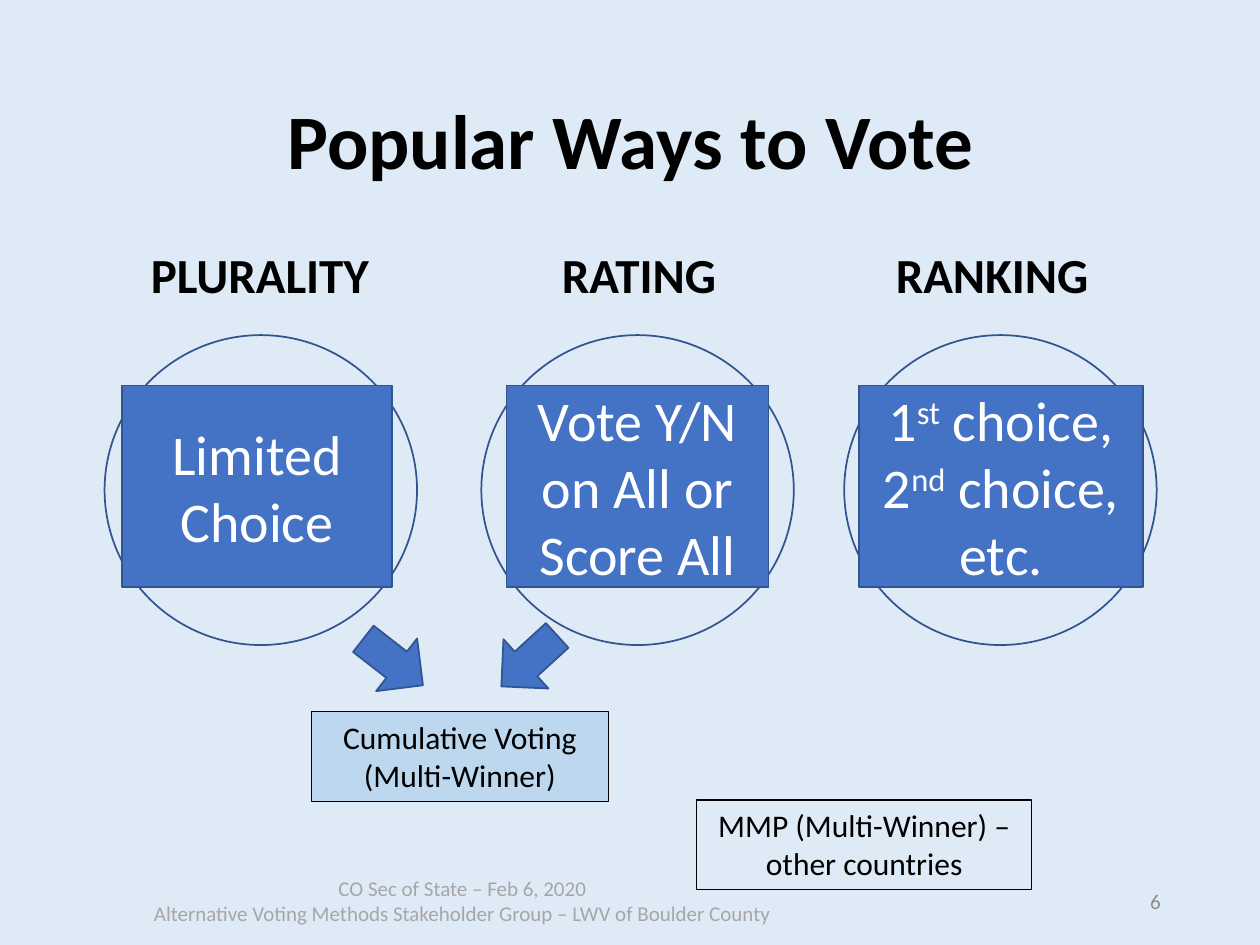
from dataclasses import dataclass

from pptx import Presentation
from pptx import util as u
from pptx.dml.color import RGBColor
from pptx.enum import shapes, text


@dataclass(frozen=True)
class Theme:
    font: str = "Calibri"
    background: str = "DEEBF7"
    ink: str = "000000"
    blue: str = "4472C4"
    outline: str = "325491"
    pale_blue: str = "BDD7EE"
    white: str = "FFFFFF"
    footer: str = "A6A6A6"
    number: str = "8C8C8C"
    title_size: int = 44
    choice_size: int = 32
    heading_size: int = 28
    note_size: int = 18
    footer_size: int = 12


COLUMNS, ROWS = 100, 75
CENTER, LEFT, RIGHT = text.PP_ALIGN.CENTER, text.PP_ALIGN.LEFT, text.PP_ALIGN.RIGHT
TOP, MIDDLE, BOTTOM = (text.MSO_ANCHOR.TOP, text.MSO_ANCHOR.MIDDLE,
                       text.MSO_ANCHOR.BOTTOM)
KIND = shapes.MSO_SHAPE


def write(frame, content, *, font, size, color, bold=False, align=CENTER,
          anchor=TOP, spacing=None):
    """Lines become paragraphs; parts between ^ marks are superscript."""
    frame.word_wrap = True
    frame.vertical_anchor = anchor
    for index, line in enumerate(content.split("\n")):
        paragraph = frame.add_paragraph() if index else frame.paragraphs[0]
        paragraph.alignment = align
        if spacing:
            paragraph.line_spacing = spacing
        for position, part in enumerate(line.split("^")):
            run = paragraph.add_run()
            run.text = part
            run.font.name, run.font.size, run.font.bold = font, u.Pt(size), bold
            run.font.color.rgb = RGBColor.from_string(color)
            if position % 2:
                run.font._element.set("baseline", "30000")


class SlideBuilder:
    def __init__(self, presentation, theme):
        self.theme = theme
        self.column = presentation.slide_width / COLUMNS
        self.row = presentation.slide_height / ROWS
        self.slide = presentation.slides.add_slide(presentation.slide_layouts[6])
        fill = self.slide.background.fill
        fill.solid()
        fill.fore_color.rgb = RGBColor.from_string(theme.background)

    def place(self, left, top, width, height):
        return (round(left * self.column), round(top * self.row),
                round(width * self.column), round(height * self.row))

    def label(self, box, content, indent=0, drop=0, **style):
        frame = self.slide.shapes.add_textbox(*self.place(*box)).text_frame
        frame.margin_left += round(indent * self.column)
        frame.margin_bottom += round(drop * self.row)
        write(frame, content, font=self.theme.font, **style)

    def shape(self, kind, box, fill=None, line=None, weight=1, rotation=0):
        shape = self.slide.shapes.add_shape(kind, *self.place(*box))
        shape.shadow.inherit = False
        shape.rotation = rotation
        if fill:
            shape.fill.solid()
            shape.fill.fore_color.rgb = RGBColor.from_string(fill)
        else:
            shape.fill.background()
        shape.line.color.rgb = RGBColor.from_string(line or self.theme.outline)
        shape.line.width = u.Pt(weight)
        return shape

    def circle(self, left):
        self.shape(KIND.OVAL, (left, 26.6, 24.8, 24.6))

    def choice(self, left, width, content):
        shape = self.shape(KIND.RECTANGLE, (left, 30.6, width, 16), self.theme.blue)
        write(shape.text_frame, content, font=self.theme.font, anchor=MIDDLE,
              size=self.theme.choice_size, color=self.theme.white)

    def arrow(self, left, top, rotation):
        self.shape(KIND.RIGHT_ARROW, (left, top, 6, 5.3), self.theme.blue,
                   rotation=rotation)

    def note(self, box, content, fill=None, weight=0.75):
        shape = self.shape(KIND.RECTANGLE, box, fill, self.theme.ink, weight)
        write(shape.text_frame, content, font=self.theme.font,
              size=self.theme.note_size, color=self.theme.ink)


def main():
    presentation = Presentation()
    presentation.slide_width, presentation.slide_height = u.Inches(10), u.Inches(7.5)
    theme = Theme()
    builder = SlideBuilder(presentation, theme)

    # Footer, title and slide number
    builder.label((9.5, 69, 54.4, 4),
                  "CO Sec of State – Feb 6, 2020\n"
                  "Alternative Voting Methods Stakeholder Group – LWV of Boulder County",
                  size=theme.footer_size, color=theme.footer)
    builder.label((6, 5.2, 88.1, 13.2), "Popular Ways to Vote", drop=3.1,
                  size=theme.title_size, color=theme.ink, bold=True,
                  anchor=BOTTOM, spacing=0.9)
    builder.label((70.6, 69.5, 22.5, 4), "6", size=theme.footer_size,
                  color=theme.number, align=RIGHT, anchor=MIDDLE)

    # Three voting families: circles, choice boxes, headings
    for left in (8.3, 38.2, 67):
        builder.circle(left)
    for left, width, content in (
            (9.7, 21.4, "Limited Choice"),
            (40.2, 20.8, "Vote Y/N on All or Score All"),
            (68.2, 22.5, "1^st^ choice, 2^nd^ choice, etc.")):
        builder.choice(left, width, content)
    for left, width, indent, heading in ((11, 19.4, 0, "PLURALITY"),
                                         (41, 22.1, 2.6, "RATING"),
                                         (67.5, 23.7, 2.6, "RANKING")):
        builder.label((left, 18.9, width, 5.7), heading, indent=indent,
                      size=theme.heading_size, color=theme.ink, bold=True,
                      align=LEFT)

    # Arrows into the combined method, and multi-winner notes
    builder.arrow(28.2, 49.9, 37.9)
    builder.arrow(39, 49.8, 137.6)
    builder.note((24.7, 56.5, 23.6, 7.1), "Cumulative Voting\n(Multi-Winner)",
                 theme.pale_blue, 0.5)
    builder.note((55.3, 63.5, 26.6, 7.1), "MMP (Multi-Winner) – other countries")

    presentation.save("out.pptx")


if __name__ == "__main__":
    main()
